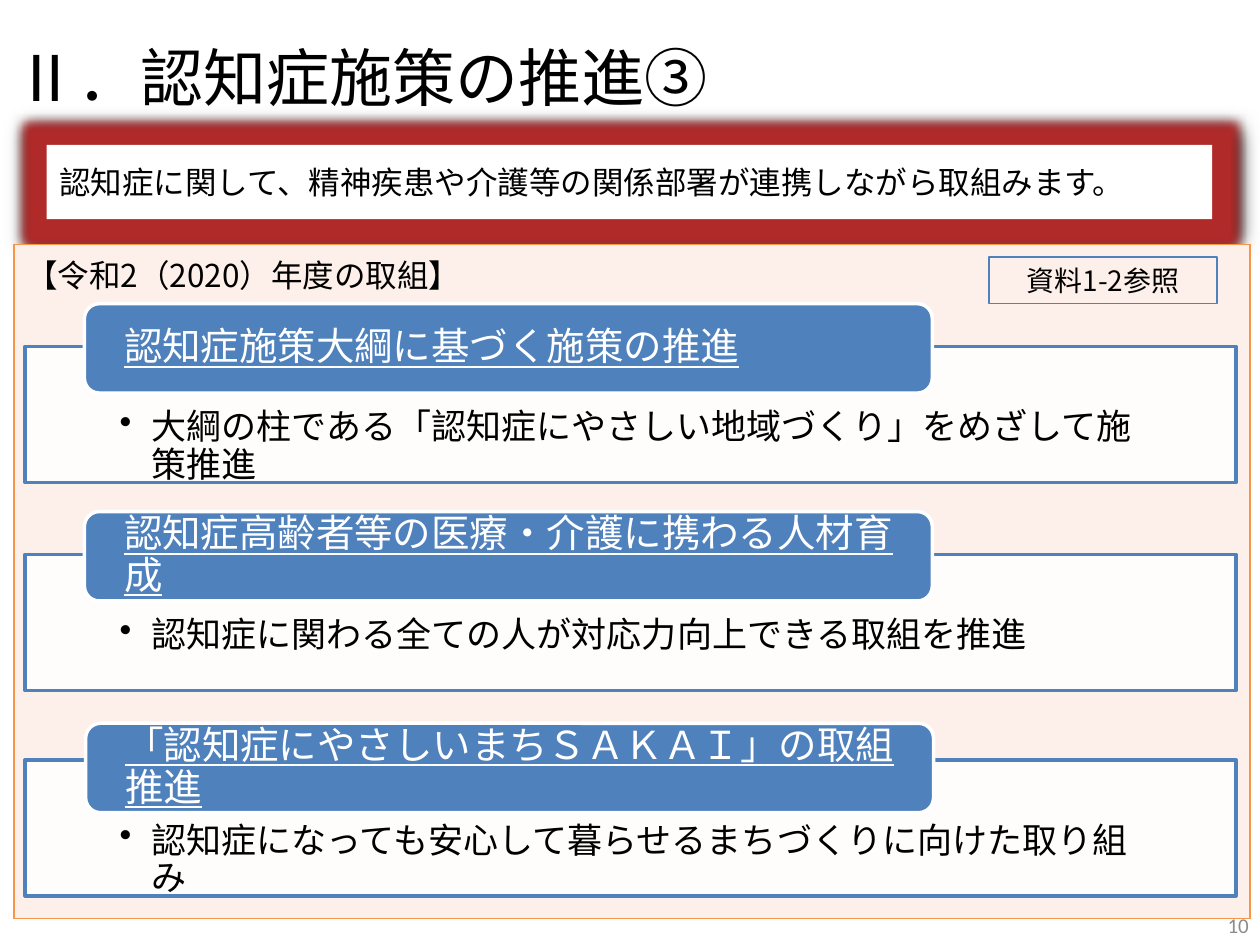
from dataclasses import dataclass
from typing import Optional

from lxml.etree import SubElement
from pptx import Presentation
from pptx.dml.color import RGBColor
from pptx.enum.shapes import MSO_SHAPE
from pptx.enum.text import MSO_ANCHOR, PP_ALIGN
from pptx.oxml import parse_xml
from pptx.oxml.ns import nsdecls, qn
from pptx.util import Inches, Pt


@dataclass(frozen=True)
class Theme:
    black: str = "000000"
    white: str = "FFFFFF"
    blue: str = "4F81BD"
    orange: str = "F79646"
    cream: str = "FDEFE9"
    gray: str = "8C8C8C"
    glow: str = "B02A2A"
    jp: str = "Noto Sans CJK JP"
    latin: str = "Calibri"
    title: int = 36
    label: int = 22
    body: int = 20
    lead: int = 18
    note: int = 16
    number: int = 12


@dataclass(frozen=True)
class Box:
    left: float
    top: float
    width: float
    height: float

    def emu(self) -> tuple:
        return tuple(Inches(v) for v in (self.left, self.top, self.width, self.height))


@dataclass(frozen=True)
class Measure:
    label: str
    body: str
    label_left: float
    label_top: float
    body_top: float


T = Theme()

MEASURES = (
    Measure("認知症施策大綱に基づく施策の推進",
            "大綱の柱である「認知症にやさしい地域づくり」をめざして施策推進", 0.67, 2.41, 2.75),
    Measure("認知症高齢者等の医療・介護に携わる人材育成",
            "認知症に関わる全ての人が対応力向上できる取組を推進", 0.67, 4.06, 4.4),
    Measure("「認知症にやさしいまちＳＡＫＡＩ」の取組推進",
            "認知症になっても安心して暮らせるまちづくりに向けた取り組み", 0.68, 5.74, 6.03),
)


def rgb(color: str) -> RGBColor:
    return RGBColor.from_string(color)


def write(tf, text: str, size: int, color: str = T.black, font: str = T.jp,
          align=PP_ALIGN.LEFT, underline: Optional[bool] = None):
    p = tf.paragraphs[0]
    p.alignment = align
    r = p.add_run()
    r.text = text
    r.font.size = Pt(size)
    r.font.name = font
    r.font.color.rgb = rgb(color)
    r.font.underline = underline
    SubElement(r.font._element, qn("a:ea")).set("typeface", T.jp)
    return p


def set_frame(tf, anchor, insets: tuple = (0.1, 0.05, 0.1, 0.05)) -> None:
    tf.word_wrap = True
    tf.vertical_anchor = anchor
    tf.margin_left, tf.margin_top, tf.margin_right, tf.margin_bottom = map(Inches, insets)


def add_text(s, box: Box, text: str, size: int, **style) -> None:
    tf = s.shapes.add_textbox(*box.emu()).text_frame
    set_frame(tf, MSO_ANCHOR.MIDDLE)
    write(tf, text, size, **style)


def add_box(s, box: Box, fill: Optional[str] = None, line: Optional[str] = None,
            weight: float = 2, kind=MSO_SHAPE.RECTANGLE):
    sp = s.shapes.add_shape(kind, *box.emu())
    sp.shadow.inherit = False
    if fill:
        sp.fill.solid()
        sp.fill.fore_color.rgb = rgb(fill)
    else:
        sp.fill.background()
    if line:
        sp.line.color.rgb = rgb(line)
        sp.line.width = Pt(weight)
    else:
        sp.line.fill.background()
    return sp


def add_lead(s, box: Box, text: str) -> None:
    sp = add_box(s, box, T.white)
    effects = sp._element.spPr.find(qn("a:effectLst"))
    effects.append(parse_xml(
        f'<a:glow {nsdecls("a")} rad="{Inches(0.14)}"><a:srgbClr val="{T.glow}"/></a:glow>'))
    effects.append(parse_xml(
        f'<a:outerShdw {nsdecls("a")} blurRad="{Pt(8.5)}" dist="{Pt(1)}" dir="5400000" '
        f'rotWithShape="0"><a:srgbClr val="{T.black}"/></a:outerShdw>'))
    set_frame(sp.text_frame, MSO_ANCHOR.MIDDLE)
    write(sp.text_frame, text, T.lead)


def add_panel(s, box: Box, text: str) -> None:
    table = s.shapes.add_table(1, 1, *box.emu()).table
    table.first_row = table.horz_banding = False
    cell = table.cell(0, 0)
    write(cell.text_frame, text, T.lead)
    cell.fill.solid()
    cell.fill.fore_color.rgb = rgb(T.cream)
    tc_pr = cell._tc.get_or_add_tcPr()
    for i, side in enumerate(("lnL", "lnR", "lnT", "lnB")):
        tc_pr.insert(i, parse_xml(
            f'<a:{side} {nsdecls("a")} w="{Pt(1)}"><a:solidFill>'
            f'<a:srgbClr val="{T.orange}"/></a:solidFill></a:{side}>'))


def add_measure(s, m: Measure) -> None:
    sp = add_box(s, Box(0.2, m.body_top, 9.61, 1.08), T.white, T.blue)
    color = sp._element.spPr.find(qn("a:solidFill"))[0]
    SubElement(color, qn("a:alpha")).set("val", "90000")
    set_frame(sp.text_frame, MSO_ANCHOR.TOP, (0.75, 0.5, 0.75, 0.16))
    p = write(sp.text_frame, m.body, T.body)
    p.level = 1
    p.line_spacing = 0.9
    p_pr = p._p.get_or_add_pPr()
    p_pr.set("marL", str(Inches(0.25)))
    p_pr.set("indent", str(Inches(-0.25)))
    SubElement(p_pr, qn("a:buChar")).set("char", "•")

    sp = add_box(s, Box(m.label_left, m.label_top, 6.73, 0.71), T.blue, T.white,
                 kind=MSO_SHAPE.ROUNDED_RECTANGLE)
    set_frame(sp.text_frame, MSO_ANCHOR.MIDDLE, (0.28, 0, 0.28, 0))
    p = write(sp.text_frame, m.label, T.label, T.white, underline=True)
    p.line_spacing = 0.9


def main() -> None:
    prs = Presentation()
    prs.slide_width, prs.slide_height = Inches(10), Inches(7.5)
    s = prs.slides.add_slide(prs.slide_layouts[6])

    add_text(s, Box(0.02, -0.02, 10, 1.25), "Ⅱ．認知症施策の推進③", T.title, font=T.latin)
    add_lead(s, Box(0.37, 1.15, 9.25, 0.59),
             "認知症に関して、精神疾患や介護等の関係部署が連携しながら取組みます。")
    add_panel(s, Box(0.11, 1.94, 9.81, 5.35), "【令和2（2020）年度の取組】")

    sp = add_box(s, Box(7.85, 2.04, 1.81, 0.37), line=T.blue, weight=0.75)
    set_frame(sp.text_frame, MSO_ANCHOR.MIDDLE)
    write(sp.text_frame, "資料1-2参照", T.note, align=PP_ALIGN.CENTER)

    add_text(s, Box(7.68, 7.14, 2.33, 0.4), "10", T.number, color=T.gray,
             font=T.latin, align=PP_ALIGN.RIGHT)
    for m in MEASURES:
        add_measure(s, m)

    prs.save("out.pptx")


if __name__ == "__main__":
    main()
